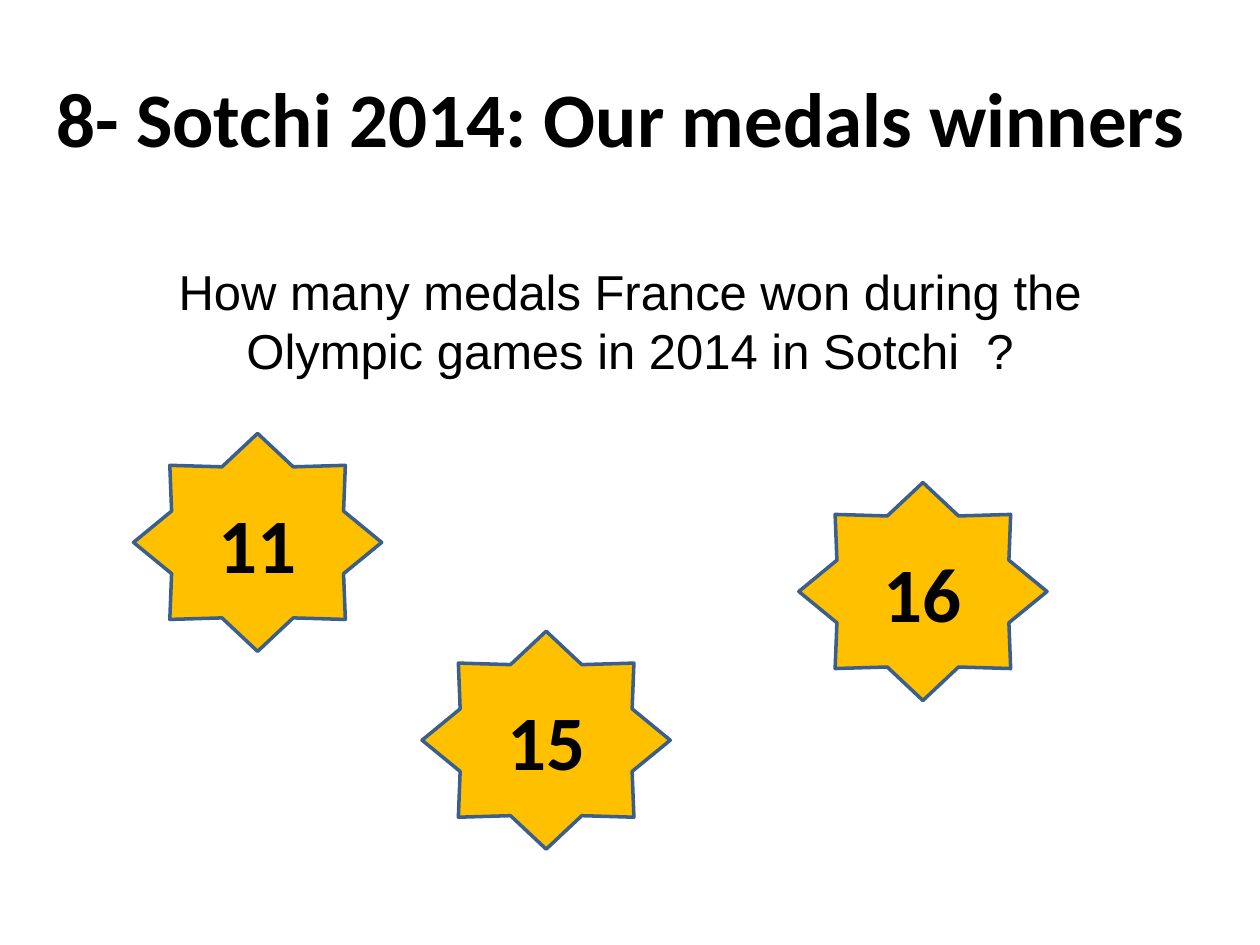
import pptx
import pptx.util
import pptx.dml.color
import pptx.enum.shapes
import pptx.enum.text

WIDE, HIGH = 10, 7.5
THEME = {
    "ink": "000000", "gold": "FFC000", "edge": "3A5F8C",
    "head": ("Calibri", 44, True), "body": ("Arial", 28, False),
    "line": 2,
}
TITLE = "8- Sotchi 2014: Our medals winners "
ASK = "How many medals France won during the Olympic games in 2014 in Sotchi  ?"
STARS = [("11", 1.06, 3.44), ("15", 3.35, 5.01), ("16", 6.34, 3.83)]
STAR = (1.97, 1.73)
SIDE = WIDE / 15

Inch = pptx.util.Inches
Anchor = pptx.enum.text.MSO_ANCHOR


def color(name):
    return pptx.dml.color.RGBColor.from_string(THEME[name])


def write(shape, text, style, anchor):
    frame = shape.text_frame
    frame.text = text
    frame.word_wrap = True
    frame.vertical_anchor = anchor
    para = frame.paragraphs[0]
    para.alignment = pptx.enum.text.PP_ALIGN.CENTER
    font = para.runs[0].font
    font.name, size, font.bold = THEME[style]
    font.size = pptx.util.Pt(size)
    font.color.rgb = color("ink")


def label(slide, box, text, style, anchor):
    shape = slide.shapes.add_textbox(*map(Inch, box))
    write(shape, text, style, anchor)


def star(slide, text, left, top):
    shape = slide.shapes.add_shape(
        pptx.enum.shapes.MSO_SHAPE.STAR_8_POINT,
        *map(Inch, (left, top, *STAR)))
    shape.shadow.inherit = False
    shape.fill.solid()
    shape.fill.fore_color.rgb = color("gold")
    shape.line.color.rgb = color("edge")
    shape.line.width = pptx.util.Pt(THEME["line"])
    write(shape, text, "head", Anchor.MIDDLE)


def main():
    deck = pptx.Presentation()
    deck.slide_width, deck.slide_height = Inch(WIDE), Inch(HIGH)
    slide = deck.slides.add_slide(deck.slide_layouts[6])
    label(slide, (0, HIGH * 0.04, WIDE, HIGH / 6), TITLE, "head", Anchor.MIDDLE)
    label(slide, (SIDE, HIGH * 0.27, WIDE - 2 * SIDE, 1.38), ASK, "body", Anchor.TOP)
    for item in STARS:
        star(slide, *item)
    deck.save("out.pptx")


if __name__ == "__main__":
    main()
